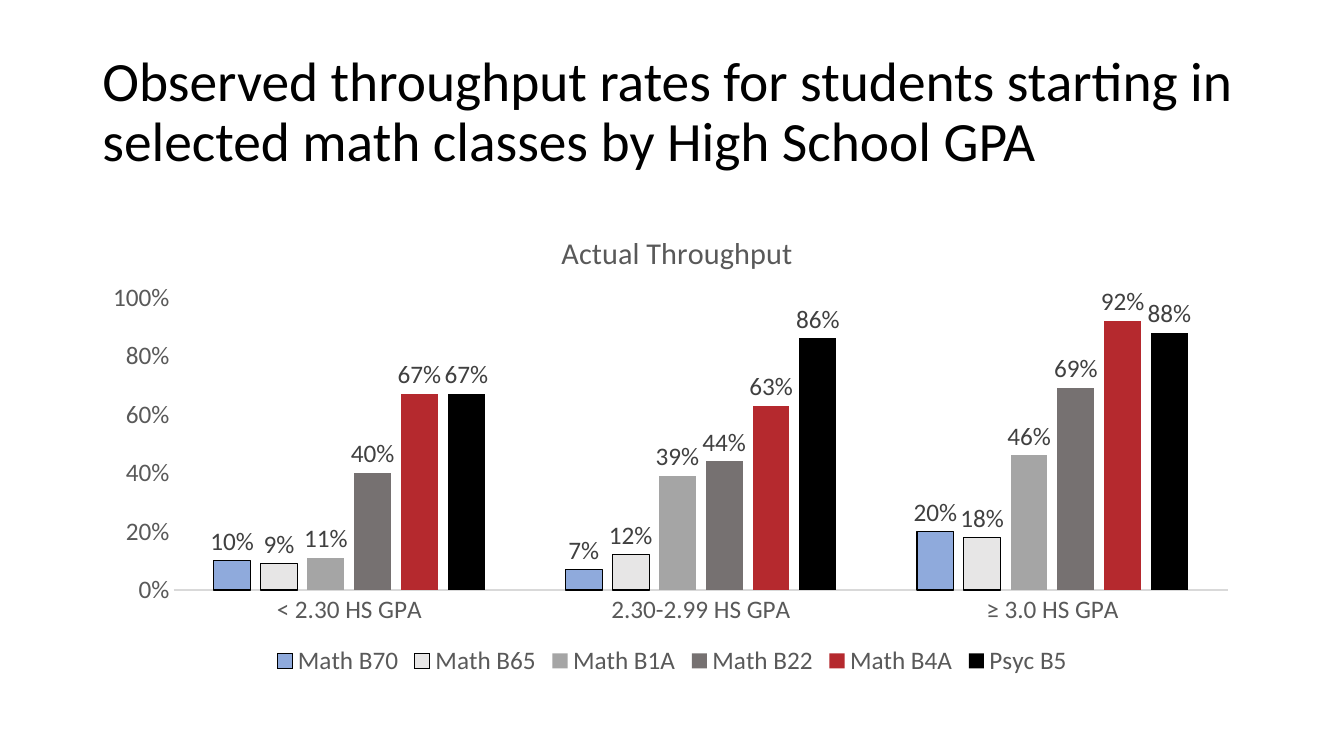
from pptx import Presentation
from pptx.chart.data import CategoryChartData
from pptx.dml.color import RGBColor
from pptx.enum import chart as ch, text
from pptx.oxml import parse_xml
from pptx.oxml.ns import nsdecls, qn
from pptx.util import Pt


def style(font, size, color):
    font.name = "Calibri"
    font.size = Pt(size)
    font.bold = False
    font.color.rgb = RGBColor.from_string(color)


def place(node, index, target, **box):
    """Fix a chart part at fractions of the chart area."""
    for old in node.findall(qn("c:layout")):
        node.remove(old)
    inner = f'<c:layoutTarget val="{target}"/>' if target else ""
    modes = "".join(f'<c:{k}Mode val="edge"/>' for k in "xy")
    sizes = "".join(f'<c:{k} val="{v}"/>' for k, v in box.items())
    node.insert(index, parse_xml(
        f'<c:layout {nsdecls("c")}><c:manualLayout>'
        f'{inner}{modes}{sizes}</c:manualLayout></c:layout>'))


prs = Presentation()
prs.slide_width, prs.slide_height = Pt(960), Pt(540)
slide = prs.slides.add_slide(prs.slide_layouts[5])

# Heading
title = slide.shapes.title
title.left, title.top = Pt(66), Pt(28.75)
title.width, title.height = Pt(828), Pt(104.4)
frame = title.text_frame
frame.text = ("Observed throughput rates for students starting in "
              "selected math classes by High School GPA")
frame.auto_size = text.MSO_AUTO_SIZE.NONE
frame.vertical_anchor = text.MSO_ANCHOR.MIDDLE
para = frame.paragraphs[0]
para.alignment = text.PP_ALIGN.LEFT
para.line_spacing = 0.9
style(para.font, 39.6, "000000")

# Throughput by class: name, rates, fill, outlined
classes = [
    ("Math B70", (0.10, 0.07, 0.20), "8FAADC", True),
    ("Math B65", (0.09, 0.12, 0.18), "E7E6E6", True),
    ("Math B1A", (0.11, 0.39, 0.46), "A5A5A5", False),
    ("Math B22", (0.40, 0.44, 0.69), "767171", False),
    ("Math B4A", (0.67, 0.63, 0.92), "B5292E", False),
    ("Psyc B5", (0.67, 0.86, 0.88), "000000", False),
]
data = CategoryChartData(number_format="0%")
data.categories = ["< 2.30 HS GPA", "2.30-2.99 HS GPA", "≥ 3.0 HS GPA"]
for name, rates, _, _ in classes:
    data.add_series(name, rates)
chart = slide.shapes.add_chart(
    ch.XL_CHART_TYPE.COLUMN_CLUSTERED,
    Pt(66), Pt(144), Pt(828), Pt(342.6), data).chart
style(chart.font, 18, "595959")

# Chart title and legend
chart.has_title = True
head = chart.chart_title
head.include_in_layout = False
head.text_frame.text = "Actual Throughput"
style(head.text_frame.paragraphs[0].font, 21.6, "595959")
place(head._element, 1, "", x=0.4, y=0.05)
chart.has_legend = True
chart.legend.position = ch.XL_LEGEND_POSITION.BOTTOM
chart.legend.include_in_layout = False
style(chart.legend.font, 18, "595959")

# Axes
cats, vals = chart.category_axis, chart.value_axis
for axis in (cats, vals):
    axis.major_tick_mark = axis.minor_tick_mark = ch.XL_TICK_MARK.NONE
    axis.has_major_gridlines = False
    style(axis.tick_labels.font, 18, "595959")
cats.format.line.color.rgb = RGBColor.from_string("D9D9D9")
cats.format.line.width = Pt(0.75)
vals.format.line.fill.background()
vals.minimum_scale, vals.maximum_scale, vals.major_unit = 0, 1, 0.2
vals.tick_labels.number_format = "0%"
vals.tick_labels.number_format_is_linked = False

# Columns
plot = chart.plots[0]
plot.gap_width, plot.overlap = 219, -27
plot.vary_by_categories = False
for series, (_, _, color, lined) in zip(plot.series, classes):
    series.format.fill.solid()
    series.format.fill.fore_color.rgb = RGBColor.from_string(color)
    line = series.format.line
    if lined:
        line.color.rgb = RGBColor.from_string("000000")
        line.width = Pt(0.75)
    else:
        line.fill.background()
    labels = series.data_labels
    labels.show_value = True
    labels.number_format = "0%"
    labels.number_format_is_linked = False
    labels.position = ch.XL_LABEL_POSITION.OUTSIDE_END
    style(labels.font, 18, "404040")
area = chart._chartSpace.find(".//" + qn("c:plotArea"))
place(area, 0, "inner", x=0.07, y=0.2, w=0.91, h=0.61)

prs.save("out.pptx")
